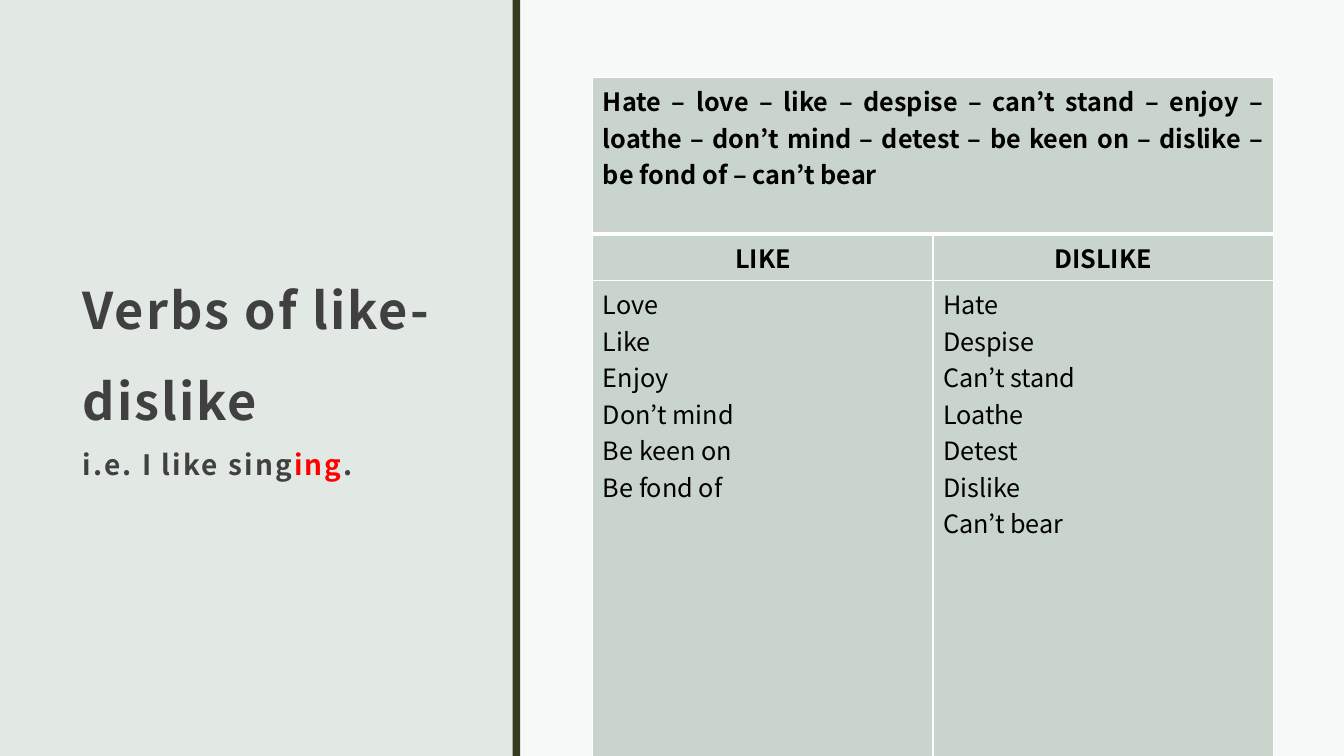
from copy import deepcopy
from dataclasses import dataclass

from lxml import etree
from pptx import Presentation
from pptx.dml.color import RGBColor
from pptx.enum.shapes import MSO_SHAPE
from pptx.enum.text import MSO_ANCHOR, MSO_AUTO_SIZE, PP_ALIGN
from pptx.oxml.ns import qn
from pptx.util import Pt

RECTANGLE = MSO_SHAPE.RECTANGLE
MIDDLE = MSO_ANCHOR.MIDDLE
NO_AUTOFIT = MSO_AUTO_SIZE.NONE
LEFT, CENTER, JUSTIFY = PP_ALIGN.LEFT, PP_ALIGN.CENTER, PP_ALIGN.JUSTIFY


@dataclass(frozen=True)
class Theme:
    font: str = "Noto Sans CJK JP"
    background: str = "E2E8E4"
    white: str = "FFFFFF"
    bar: str = "333B22"
    cell: str = "C8D4CC"
    heading: str = "404040"
    body: str = "000000"
    accent: str = "FF0000"
    heading_size: int = 36
    example_size: int = 20
    body_size: int = 18


theme = Theme()


def style_run(run, size, color, bold):
    run.font.name = theme.font
    run.font.size = Pt(size)
    run.font.bold = bold
    run.font.color.rgb = RGBColor.from_string(color)


def add_border(cell, side, width):
    line = etree.SubElement(cell._tc.get_or_add_tcPr(), qn(f"a:ln{side}"), w=str(Pt(width)))
    fill = etree.SubElement(line, qn("a:solidFill"))
    etree.SubElement(fill, qn("a:srgbClr"), val=theme.white)


deck = Presentation()
deck.slide_width, deck.slide_height = Pt(960), Pt(540)
page = deck.slides.add_slide(deck.slide_layouts[5])
page.background.fill.solid()
page.background.fill.fore_color.rgb = RGBColor.from_string(theme.background)

# Right panel and dividing bar
for left, width, color in [(371.5, 588.5, theme.white), (366.1, 5.4, theme.bar)]:
    box = page.shapes.add_shape(RECTANGLE, Pt(left), 0, Pt(width), deck.slide_height)
    box.shadow.inherit = False
    box.line.fill.background()
    box.fill.solid()
    box.fill.fore_color.rgb = RGBColor.from_string(color)
    if color == theme.white:
        shade = box._element.spPr.find(f".//{qn('a:srgbClr')}")
        etree.SubElement(shade, qn("a:alpha"), val="75000")

# Title with an example sentence below it
title = page.shapes.title
title.left, title.top, title.width, title.height = Pt(50.4), Pt(55.4), Pt(268.6), Pt(409)
frame = title.text_frame
frame.word_wrap = True
frame.auto_size = NO_AUTOFIT
frame.vertical_anchor = MIDDLE
frame.margin_left = frame.margin_top = frame.margin_right = Pt(8.6)
frame.margin_bottom = Pt(7.2)
para = frame.paragraphs[0]
para.alignment = LEFT
para.line_spacing = 1.5
title_parts = [
    ("Verbs of like-dislike", theme.heading_size, theme.heading),
    ("i.e. I like sing", theme.example_size, theme.heading),
    ("ing", theme.example_size, theme.accent),
    (".", theme.example_size, theme.heading),
]
for index, (text, size, color) in enumerate(title_parts):
    span = para.add_run()
    span.text = text
    style_run(span, size, color, True)
    span._r.rPr.set("spc", "150")
    if index == 0:
        para.add_line_break()
        para._p[-1].append(deepcopy(span._r.rPr))  # the break keeps the heading size

# Table of verbs: text, alignment and weight of each row
verb_rows = [
    (["Hate – love – like – despise – can’t stand – enjoy – loathe – don’t mind – "
      "detest – be keen on – dislike – be fond of – can’t bear", ""], JUSTIFY, True),
    (["LIKE", "DISLIKE"], CENTER, True),
    (["Love\nLike\nEnjoy\nDon’t mind\nBe keen on\nBe fond of",
      "Hate\nDespise\nCan’t stand\nLoathe\nDetest\nDislike\nCan’t bear"], LEFT, False),
]
row_heights = [111.6, 33, 417.7]
table = page.shapes.add_table(
    len(verb_rows), 2, Pt(423.5), Pt(55.4), Pt(486), Pt(sum(row_heights))
).table
table.first_row = table.horz_banding = False
table.cell(0, 0).merge(table.cell(0, 1))

for row, (texts, alignment, bold) in enumerate(verb_rows):
    table.rows[row].height = Pt(row_heights[row])
    for column, text in enumerate(texts):
        cell = table.cell(row, column)
        for side in "LRTB":
            thick = (row, side) in [(0, "B"), (1, "T")]
            add_border(cell, side, 3 if thick else 1)
        cell.fill.solid()
        cell.fill.fore_color.rgb = RGBColor.from_string(theme.cell)
        if cell.is_spanned:
            continue
        cell.text_frame.text = text
        for para in cell.text_frame.paragraphs:
            para.alignment = alignment
            for span in para.runs:
                style_run(span, theme.body_size, theme.body, bold)

deck.save("out.pptx")
